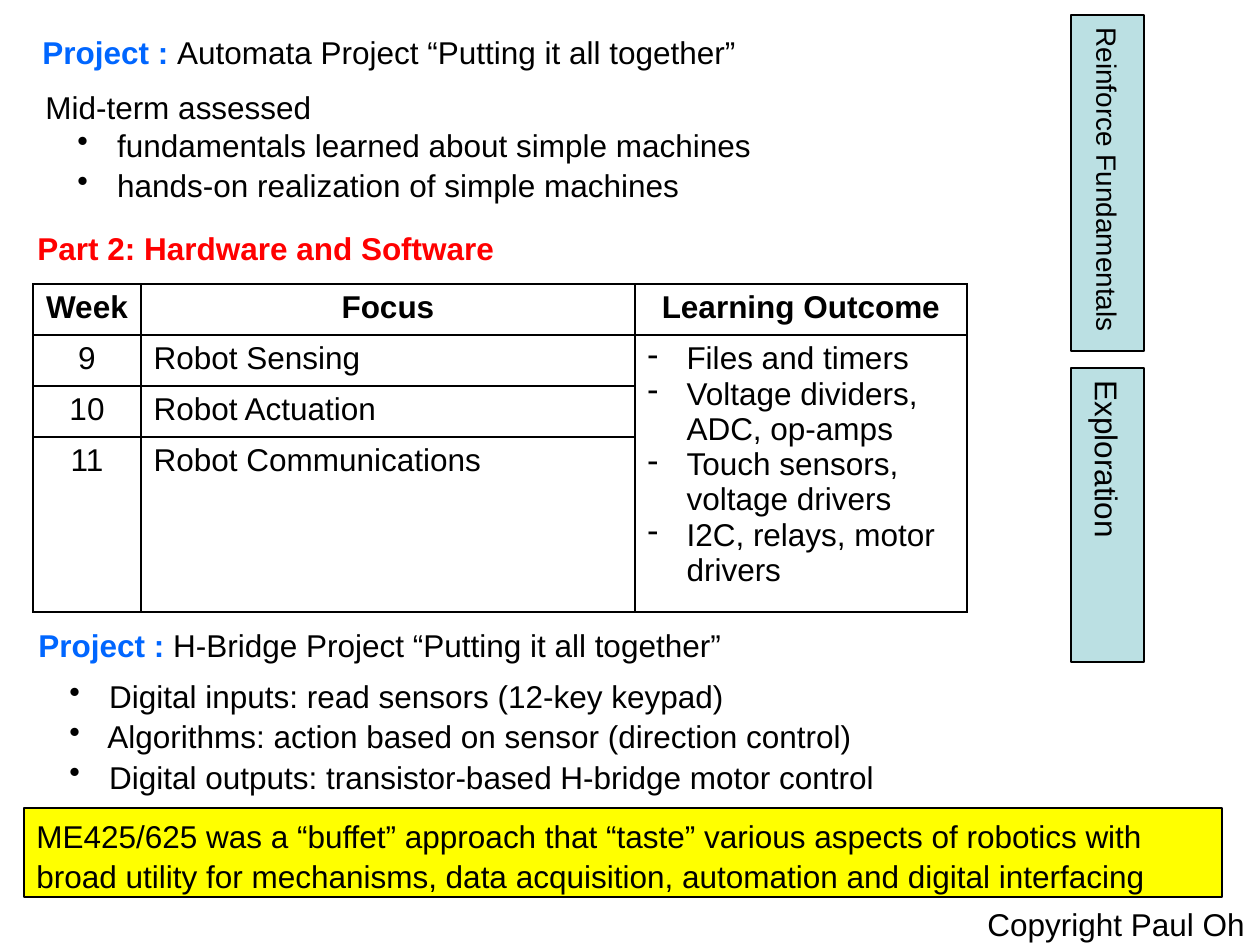
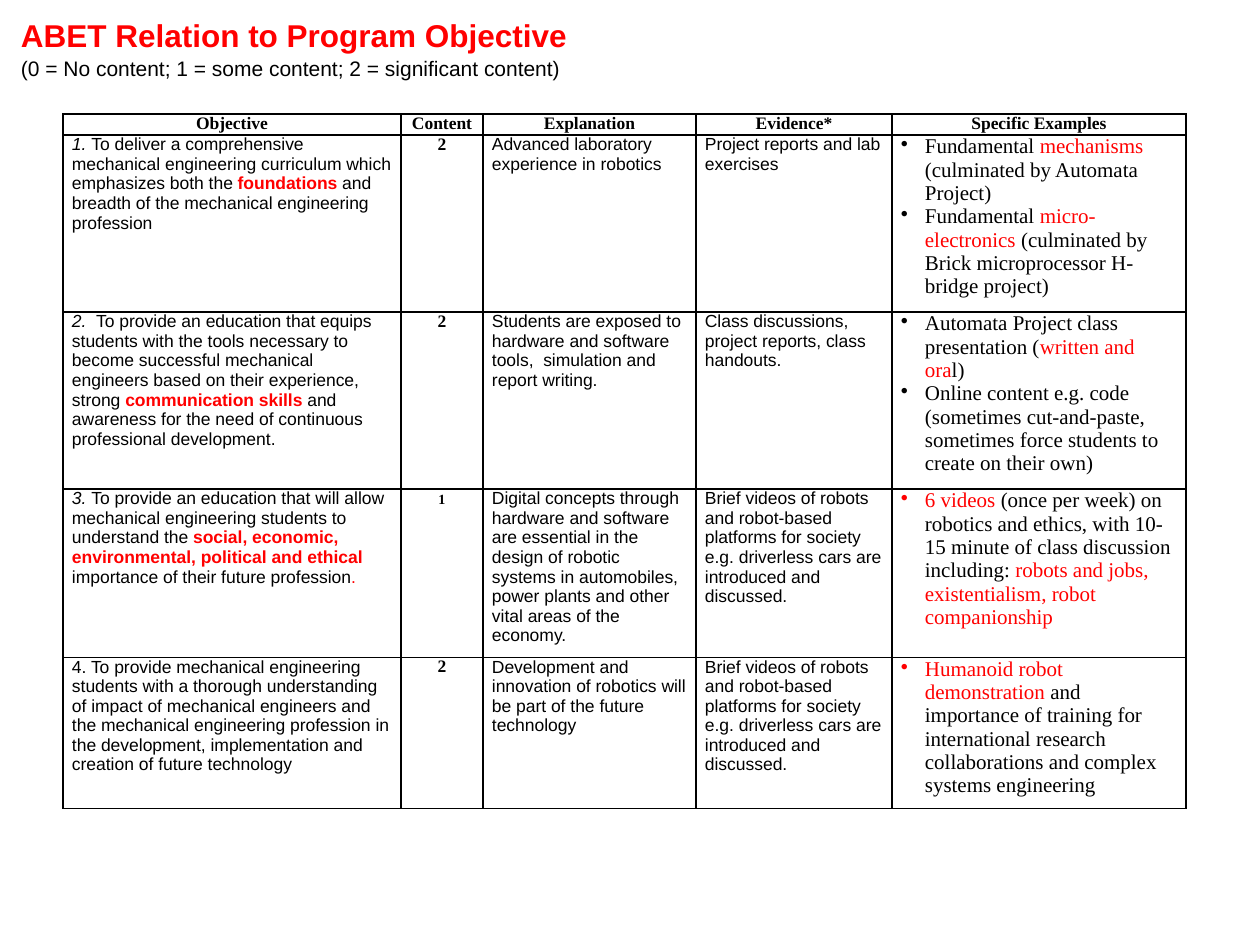
from pptx import Presentation
from pptx.dml.color import RGBColor
from pptx.enum.shapes import MSO_SHAPE
from pptx.enum.text import MSO_ANCHOR, PP_ALIGN
from pptx.oxml.ns import qn
from pptx.util import Emu, Pt
from lxml import etree

BLACK, RED, BLUE = "000000", "FF0000", "0066FF"
TEAL, YELLOW = "BBE0E3", "FFFF00"
SANS, SERIF = "Arial", "Times New Roman"

# Run styles
HEAD = {"color": RED, "bold": True}
LABEL = {"color": BLUE, "bold": True}
MARK = {"color": RED}
SLANT = {"italic": True}
# Paragraph styles: bullet sign, left margin and hang in px
DOTS = {"bullet": "•", "left": 63, "hang": 31, "level": 1}
DASHES = {"bullet": "-", "left": 39, "hang": 39}
POINTS = {"bullet": "•", "left": 24, "hang": 24, "size": 12, "font": SERIF}
MID = {"align": PP_ALIGN.CENTER}
STRONG = {"bold": True, **MID}
SCORE = {"size": 10, "font": SERIF, **STRONG}
BODY = {"size": 10}

# Course slide: (left, top, width, height), paragraphs, format
NOTES = [
    ((30, 24, 724, 50),
     [[("Project : ", LABEL), "Automata Project “Putting it all together”"]], {}),
    ((33, 79, 742, 50), ["Mid-term assessed"], {}),
    ((33, 117, 742, 88),
     [" fundamentals learned about simple machines",
      " hands-on realization of simple machines"], DOTS),
    ((25, 220, 486, 50), ["Part 2: Hardware and Software"], HEAD),
    ((26, 617, 714, 50),
     [[("Project : ", LABEL), "H-Bridge Project “Putting it all together”"]], {}),
    ((25, 668, 874, 127),
     [" Digital inputs: read sensors (12-key keypad)",
      " Algorithms: action based on sensor (direction control)",
      " Digital outputs: transistor-based H-bridge motor control"], DOTS),
    ((975, 896, 285, 50), ["Copyright Paul Oh"], {}),
]
STAGES = [
    ((1071, 15, 73, 336), "Reinforce Fundamentals", 16),
    ((1071, 368, 73, 294), "Exploration", 18),
]
SUMMARY = ("ME425/625 was a “buffet” approach that “taste” various aspects of "
           "robotics with broad utility for mechanisms, data acquisition, "
           "automation and digital interfacing")
WEEKS = [
    ["Week", "Focus", "Learning Outcome"],
    ["9", "Robot Sensing",
     ["Files and timers", "Voltage dividers, ADC, op-amps",
      "Touch sensors, voltage drivers", "I2C, relays, motor drivers"]],
    ["10", "Robot Actuation", None],
    ["11", "Robot Communications", None],
]

# Objective slide
TITLE = [
    [("ABET Relation to Program Objective", HEAD)],
    [("(0 = No content; 1 = some content; 2 = significant content)", {"size": 12})],
]
VIDEOS = ("Brief videos of robots and robot-based platforms for society "
          "e.g. driverless cars are introduced and discussed.")
GOALS = [
    ["Objective", "Content", "Explanation", "Evidence*", "Specific Examples"],
    [[[("1. ", SLANT),
       "To deliver a comprehensive mechanical engineering curriculum which "
       "emphasizes both the ", ("foundations ", HEAD),
       "and breadth of the mechanical engineering profession"]],
     "2", "Advanced laboratory experience in robotics",
     "Project reports and lab exercises",
     [["Fundamental ", ("mechanisms", MARK), " (culminated by Automata Project)"],
      ["Fundamental ", ("micro-electronics", MARK),
       " (culminated by Brick microprocessor H-bridge project)"]]],
    [[[("2.  ", SLANT),
       "To provide an education that equips students with the tools necessary "
       "to become successful mechanical engineers based on their experience, "
       "strong ", ("communication skills ", HEAD),
       "and awareness for the need of continuous professional development."]],
     "2",
     "Students are exposed to hardware and software tools,  simulation and "
     "report writing.",
     "Class discussions, project reports, class handouts.",
     [["Automata Project class presentation (", ("written and ora", MARK), "l)"],
      "Online content e.g. code (sometimes cut-and-paste, sometimes force "
      "students to create on their own)"]],
    [[[("3. ", SLANT),
       "To provide an education that will allow mechanical engineering students "
       "to understand the ",
       ("social, economic, environmental, political and ethical ", HEAD),
       "importance of their future profession", (".", MARK)]],
     [[("1", {"caps": "small"})]],
     "Digital concepts through hardware and software are essential in the "
     "design of robotic systems in automobiles, power plants and other vital "
     "areas of the economy.",
     VIDEOS,
     [[("6 videos ", MARK),
       "(once per week) on robotics and ethics, with 10-15 minute of class "
       "discussion including: ",
       ("robots and jobs, existentialism, robot companionship", MARK)]]],
    ["4. To provide mechanical engineering students with a thorough understanding "
     "of impact of mechanical engineers and the mechanical engineering profession "
     "in the development, implementation and creation of future technology",
     "2",
     "Development and innovation of robotics will be part of the future technology",
     VIDEOS,
     [[("Humanoid robot demonstration", MARK),
       " and importance of training for international research collaborations "
       "and complex systems engineering"]]],
]


def px(n):
    return Emu(round(n * 914400 / 126))


def hue(code):
    return RGBColor.from_string(code)


def style(run, size=18, font=SANS, color=BLACK, bold=False, italic=False, caps=None):
    face = run.font
    face.size, face.name = Pt(size), font
    face.bold, face.italic = bold, italic
    face.color.rgb = hue(color)
    if caps:
        run._r.get_or_add_rPr().set("cap", caps)


def write(frame, paras, align=PP_ALIGN.LEFT, bullet=None, left=0, hang=0,
          level=0, space=None, **look):
    """Fill a frame; a paragraph is a string or a list of runs."""
    for i, para in enumerate(paras):
        p = frame.paragraphs[0] if i == 0 else frame.add_paragraph()
        p.alignment, p.level = align, level
        if space:
            p.line_spacing = space
        if bullet:
            props = p._p.get_or_add_pPr()
            props.set("marL", str(px(left)))
            props.set("indent", str(-px(hang)))
            etree.SubElement(props, qn("a:buChar")).set("char", bullet)
        for part in [para] if isinstance(para, str) else para:
            text, extra = (part, {}) if isinstance(part, str) else part
            run = p.add_run()
            run.text = text
            style(run, **{**look, **extra})


def note(slide, box, paras, **form):
    frame = slide.shapes.add_textbox(*map(px, box)).text_frame
    frame.word_wrap = True
    write(frame, paras, space=1.07, **form)
    return frame


def panel(slide, box, fill, text, **form):
    shape = slide.shapes.add_shape(MSO_SHAPE.RECTANGLE, *map(px, box))
    shape.shadow.inherit = False
    shape.fill.solid()
    shape.fill.fore_color.rgb = hue(fill)
    shape.line.color.rgb = hue(BLACK)
    shape.line.width = Pt(0.75)
    frame = shape.text_frame
    frame.word_wrap = True
    write(frame, [text], **form)
    return frame


def border(cell):
    props = cell._tc.get_or_add_tcPr()
    for i, side in enumerate(("lnL", "lnR", "lnT", "lnB")):
        line = etree.Element(qn(f"a:{side}"), w=str(Pt(1)))
        fill = etree.SubElement(line, qn("a:solidFill"))
        etree.SubElement(fill, qn("a:srgbClr")).set("val", BLACK)
        props.insert(i, line)


def grid(slide, spot, cols, rows, data, head, forms, pad=None):
    """Draw a ruled table; forms holds one format per column."""
    box = (*spot, sum(cols), sum(rows))
    table = slide.shapes.add_table(len(rows), len(cols), *map(px, box)).table
    table.first_row = table.horz_banding = False
    for col, wide in zip(table.columns, cols):
        col.width = px(wide)
    for r, (row, high) in enumerate(zip(data, rows)):
        table.rows[r].height = px(high)
        for c, item in enumerate(row):
            cell = table.cell(r, c)
            cell.fill.background()
            border(cell)
            if pad is not None:
                cell.margin_left = cell.margin_right = px(pad)
                cell.margin_top = cell.margin_bottom = 0
            if item is not None:
                paras = [item] if isinstance(item, str) else item
                write(cell.text_frame, paras, **(forms[c] if r else head))
    return table


def course(slide):
    for box, paras, form in NOTES:
        note(slide, box, paras, **form)
    for box, text, size in STAGES:
        frame = panel(slide, box, TEAL, text, size=size)
        frame.vertical_anchor = MSO_ANCHOR.MIDDLE
        frame._txBody.bodyPr.set("vert", "eaVert")
    table = grid(slide, (33, 284), [108, 494, 332], [51, 51, 51, 175],
                 WEEKS, STRONG, [MID, {}, DASHES])
    table.cell(1, 2).merge(table.cell(3, 2))
    frame = panel(slide, (24, 808, 1198, 89), YELLOW, SUMMARY, space=1.07)
    frame.vertical_anchor = MSO_ANCHOR.TOP


def goals(slide):
    grid(slide, (63, 114), [338, 82, 213, 196, 294], [21, 177, 177, 168, 151],
         GOALS, SCORE, [BODY, SCORE, BODY, BODY, POINTS], pad=9)
    frame = note(slide, (21, 13, 609, 66), TITLE)
    frame.margin_left = frame.margin_right = 0
    frame.margin_top = frame.margin_bottom = 0


def main():
    deck = Presentation()
    deck.slide_width, deck.slide_height = px(1260), px(945)
    for draw in (course, goals):
        draw(deck.slides.add_slide(deck.slide_layouts[6]))
    deck.save("out.pptx")


if __name__ == "__main__":
    main()
